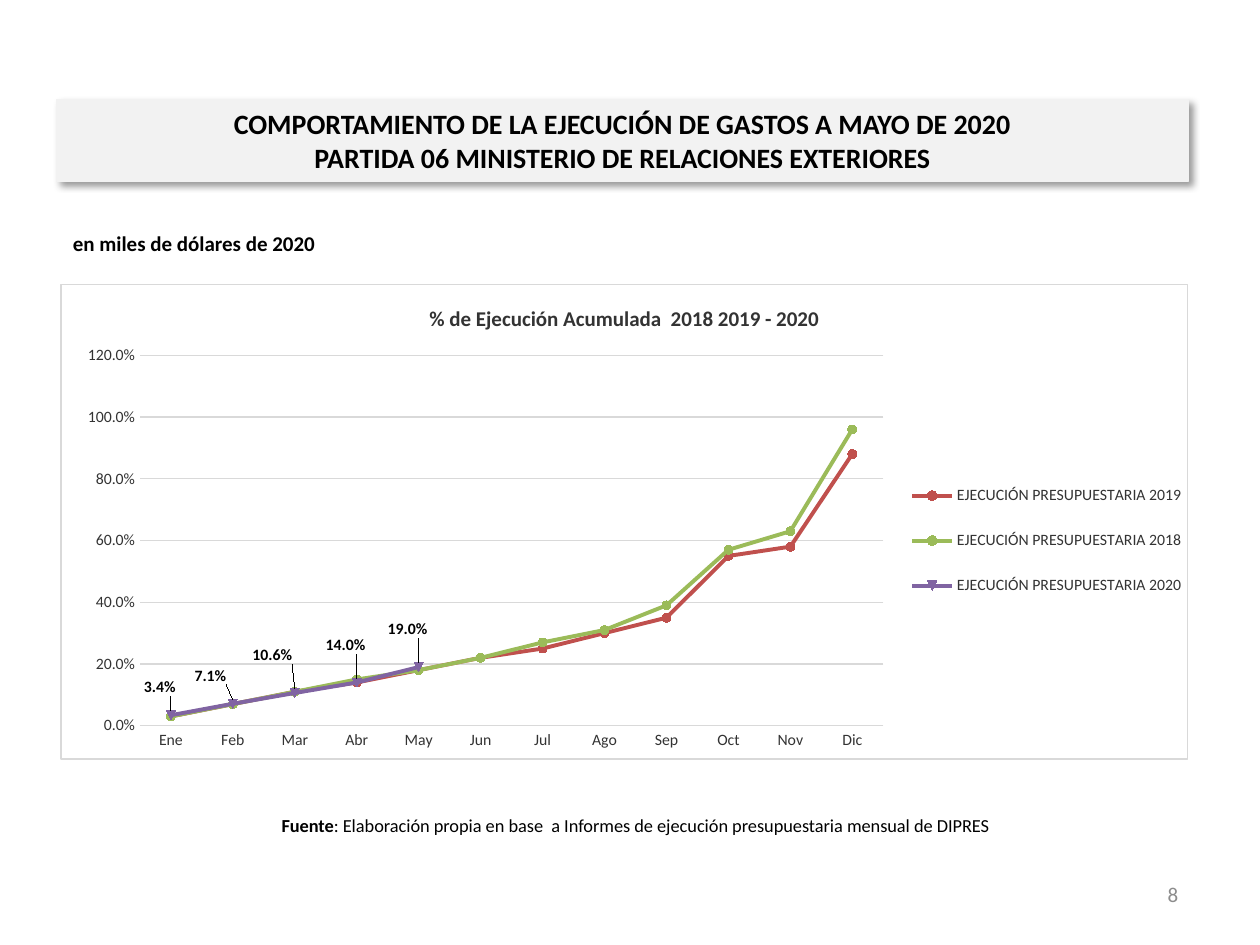
from pptx import Presentation
from pptx.chart.data import CategoryChartData as ChartData
from pptx.dml.color import RGBColor as RGB
from pptx.enum.chart import XL_CHART_TYPE as Kind, XL_LABEL_POSITION as Spot
from pptx.enum.chart import XL_LEGEND_POSITION as Side, XL_MARKER_STYLE as Mark
from pptx.enum.chart import XL_TICK_MARK as Tick
from pptx.enum.text import MSO_ANCHOR as Anchor, MSO_AUTO_SIZE as Fit, PP_ALIGN as Align
from pptx.oxml import parse_xml
from pptx.oxml.ns import nsdecls, qn
from pptx.util import Inches, Pt

FONT = "Calibri"
HUE = {
    "ink": "000000", "gray": "333333", "page": "8C8C8C", "band": "F2F2F2", "grid": "D9D9D9",
    "white": "FFFFFF", "red": "C0504D", "green": "9BBB59", "violet": "8064A2",
}
MONTHS = ["Ene", "Feb", "Mar", "Abr", "May", "Jun", "Jul", "Ago", "Sep", "Oct", "Nov", "Dic"]
RATES = [
    (2019, "red", [.03, .07, .11, .14, .18, .22, .25, .3, .35, .55, .58, .88]),
    (2018, "green", [.03, .07, .11, .15, .18, .22, .27, .31, .39, .57, .63, .96]),
    (2020, "violet", [.034, .071, .106, .14, .19] + [None] * 7),
]
SHIFTS = [(-.01, -.02), (-.02, -.02), (-.02, -.04), (-.01, -.04), (-.01, -.04)]


def style(font, size, hue="ink", bold=False):
    """Set face, size, colour and weight of a font."""
    font.name, font.size, font.bold = FONT, Pt(size), bold
    font.color.rgb = RGB.from_string(HUE[hue])


def stroke(line, hue, width=0.75):
    """Give a line a colour and a width."""
    line.color.rgb = RGB.from_string(HUE[hue])
    line.width = Pt(width)


def paint(fill, hue):
    """Fill with one plain colour."""
    fill.solid()
    fill.fore_color.rgb = RGB.from_string(HUE[hue])


def add_title(slide, text):
    """Turn the title placeholder into a shaded band."""
    title = slide.shapes.title
    title.left, title.top, title.width, title.height = map(Inches, (0.45, 0.79, 8.98, 0.65))
    paint(title.fill, "band")
    stroke(title.line, "band")
    title._element.spPr.append(parse_xml(
        f'<a:effectLst {nsdecls("a")}><a:outerShdw blurRad="{Pt(4)}" dist="{Pt(3)}" '
        f'dir="2700000" algn="tl" rotWithShape="0"><a:srgbClr val="{HUE["ink"]}">'
        '<a:alpha val="40000"/></a:srgbClr></a:outerShdw></a:effectLst>'))
    frame = title.text_frame
    frame.text = text
    frame.auto_size, frame.vertical_anchor = Fit.NONE, Anchor.MIDDLE
    frame.paragraphs[0].alignment = Align.CENTER
    for run in frame.paragraphs[0].runs:
        style(run.font, 16, bold=True)


def add_text(slide, box, parts, size, hue="ink", align=Align.LEFT, wrap=True):
    """Add one line of text made of (words, bold) parts."""
    frame = slide.shapes.add_textbox(*map(Inches, box)).text_frame
    frame.word_wrap, frame.vertical_anchor = wrap, Anchor.MIDDLE
    para = frame.paragraphs[0]
    para.alignment = align
    for words, bold in parts:
        run = para.add_run()
        run.text = words
        style(run.font, size, hue, bold)


def place(node, index, x, y, w=None, h=None, inner=False):
    """Put a manual layout into a chart part."""
    for old in node.findall(qn("c:layout")):
        node.remove(old)
    tags = '<c:layoutTarget val="inner"/>' if inner else ""
    if w:
        tags += '<c:xMode val="edge"/><c:yMode val="edge"/>'
    for name, val in zip("xywh", (x, y, w, h)):
        if val is not None:
            tags += f'<c:{name} val="{val}"/>'
    node.insert(index, parse_xml(
        f'<c:layout {nsdecls("c")}><c:manualLayout>{tags}</c:manualLayout></c:layout>'))


def style_axes(chart):
    """Format both axes and the grid."""
    months, rates = chart.category_axis, chart.value_axis
    for axis in (months, rates):
        axis.major_tick_mark = axis.minor_tick_mark = Tick.NONE
        style(axis.tick_labels.font, 9, "gray")
    stroke(months.format.line, "grid")
    rates.format.line.fill.background()
    stroke(rates.major_gridlines.format.line, "grid")
    rates.minimum_scale, rates.maximum_scale, rates.major_unit = 0, 1.2, 0.2
    rates.tick_labels.number_format = "0.0%"
    rates.tick_labels.number_format_is_linked = False


def style_lines(plot):
    """Colour the series and set round markers on the past years."""
    for line, (year, hue, _) in zip(plot.series, RATES):
        line.smooth = False
        stroke(line.format.line, hue, 2.25)
        if year < 2020:
            line.marker.style, line.marker.size = Mark.CIRCLE, 5
            paint(line.marker.format.fill, hue)
            stroke(line.marker.format.line, hue)


def add_labels(line):
    """Show the values of the current year, moved clear of the lines."""
    labels = line.data_labels
    labels.show_value, labels.position = True, Spot.ABOVE
    labels.number_format, labels.number_format_is_linked = "0.0%", False
    style(labels.font, 9, bold=True)
    for i, shift in enumerate(SHIFTS):
        label = line.points[i].data_label
        style(label.font, 9, bold=True)
        label.position = Spot.ABOVE
        place(labels._element.findall(qn("c:dLbl"))[i], 1, *shift)


def add_frame(chart):
    """Fill and outline the whole chart area."""
    chart.font._element.getparent()
    space = chart._chartSpace
    space.find(qn("c:txPr")).addprevious(parse_xml(
        f'<c:spPr {nsdecls("c", "a")}><a:solidFill><a:srgbClr val="{HUE["white"]}"/></a:solidFill>'
        f'<a:ln w="{Pt(0.75)}"><a:solidFill><a:srgbClr val="{HUE["grid"]}"/></a:solidFill></a:ln>'
        '</c:spPr>'))


def add_rates(slide):
    """Add the line chart of cumulative spending."""
    data = ChartData(number_format="0.0%")
    data.categories = MONTHS
    for year, _, vals in RATES:
        data.add_series(f"EJECUCIÓN PRESUPUESTARIA {year}", vals)
    box = map(Inches, (0.48, 2.25, 8.95, 3.78))
    chart = slide.shapes.add_chart(Kind.LINE_MARKERS, *box, data).chart
    style(chart.font, 10)
    add_frame(chart)
    chart.has_title = True
    head = chart.chart_title.text_frame
    head.text = "% de Ejecución Acumulada  2018 2019 - 2020"
    style(head.paragraphs[0].runs[0].font, 12, "gray", True)
    chart.has_legend = True
    legend = chart.legend
    legend.position, legend.include_in_layout = Side.RIGHT, False
    style(legend.font, 9, "gray")
    place(legend._element, 1, 0.75, 0.37, 0.25, 0.34)
    place(chart._chartSpace.chart.plotArea, 0, 0.07, 0.15, 0.66, 0.78, True)
    style_axes(chart)
    plot = chart.plots[0]
    plot.vary_by_categories = False
    style_lines(plot)
    add_labels(plot.series[2])


def main():
    """Build the slide and save it."""
    deck = Presentation()
    deck.slide_width, deck.slide_height = Inches(10), Inches(7.5)
    slide = deck.slides.add_slide(deck.slide_layouts[5])
    add_title(slide, "COMPORTAMIENTO DE LA EJECUCIÓN DE GASTOS A MAYO DE 2020\v"
                     "PARTIDA 06 MINISTERIO DE RELACIONES EXTERIORES")
    add_text(slide, (0.48, 1.78, 2.15, 0.3), [("en miles de dólares de 2020", True)], 12, wrap=False)
    add_rates(slide)
    add_text(slide, (0.45, 6.35, 9.19, 0.4), [
        ("Fuente", True),
        (": Elaboración propia en base  a Informes de ejecución presupuestaria mensual de DIPRES", False),
    ], 10.5, align=Align.CENTER)
    add_text(slide, (7.12, 6.9, 2.33, 0.4), [("8", False)], 12, "page", Align.RIGHT)
    deck.save("out.pptx")


if __name__ == "__main__":
    main()
